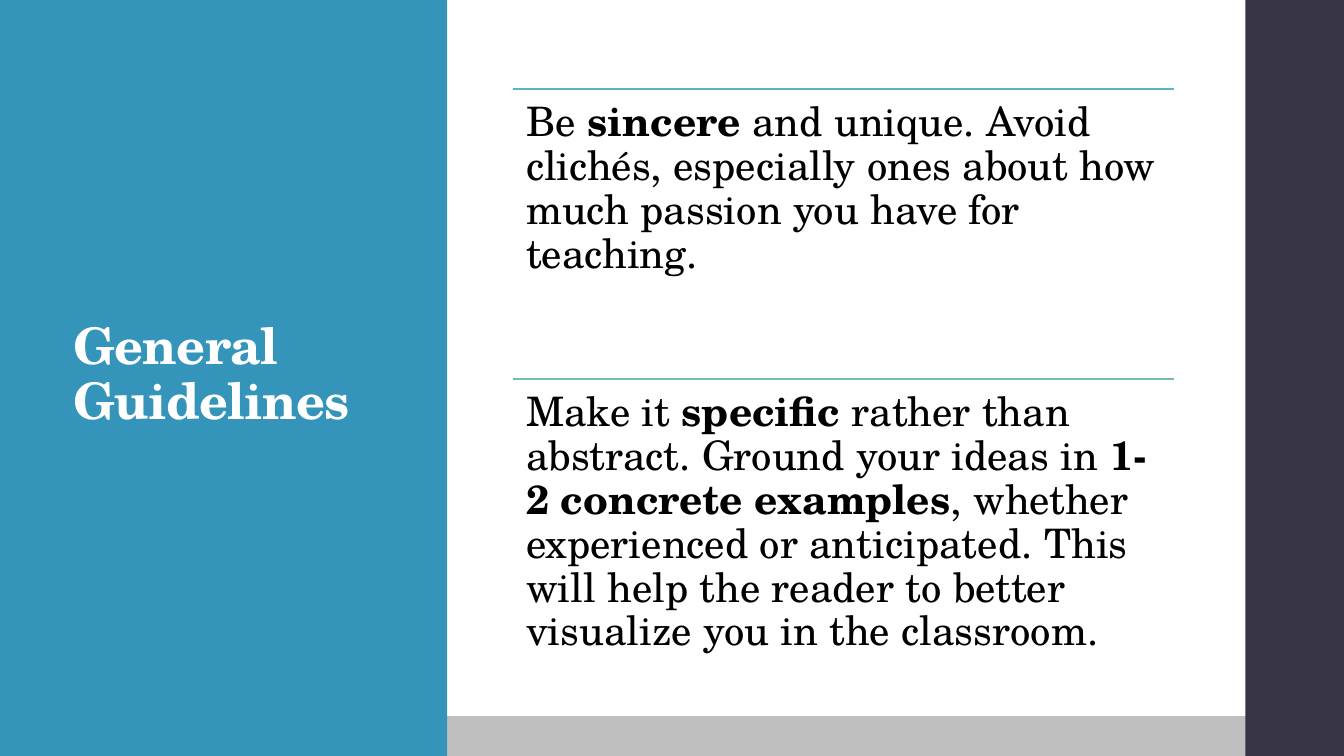
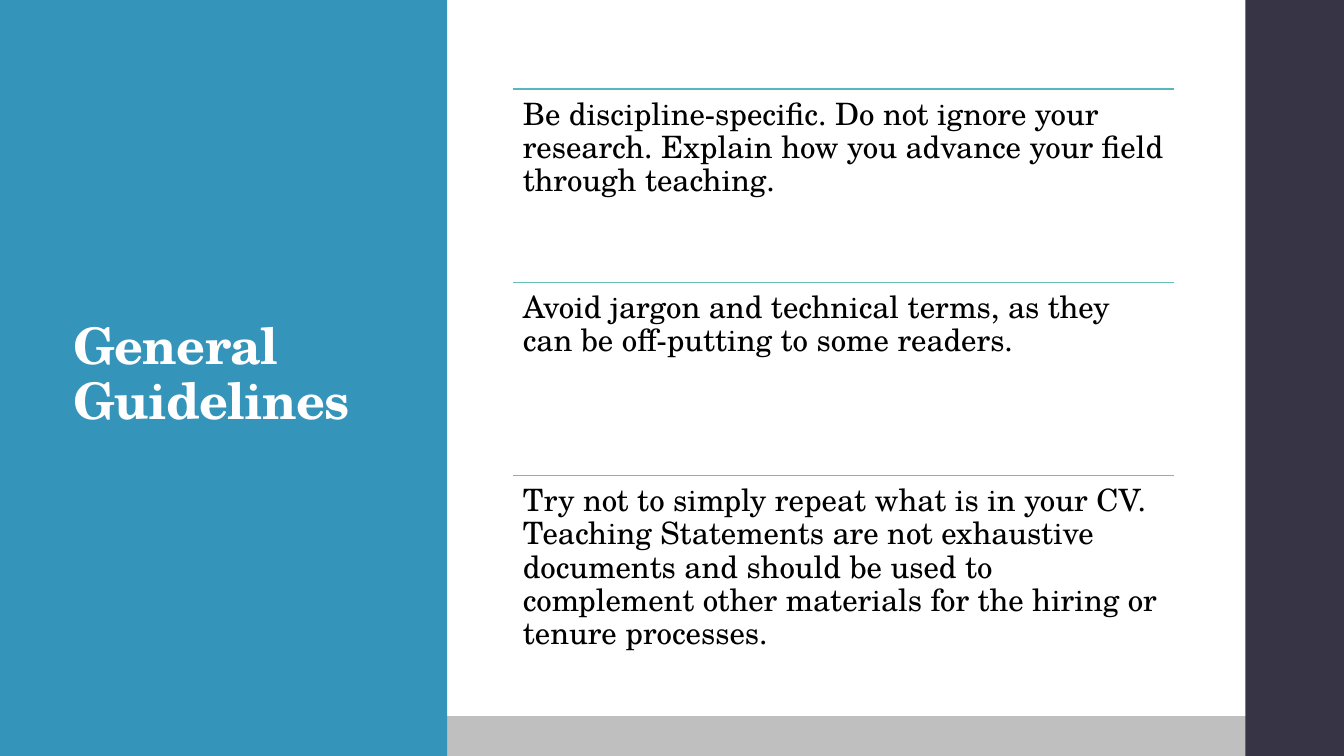
from dataclasses import dataclass

from lxml import etree
from pptx import Presentation
from pptx import util as u
from pptx.dml.color import RGBColor
from pptx.enum import shapes, text
from pptx.oxml import ns

EMU_PER_PX = 9525
SLIDE_WIDTH, SLIDE_HEIGHT = 1280, 720
FONT = "TeX Gyre Schola"
BLUE, DARK, GRAY = "3494BA", "373545", "BFBFBF"
WHITE, BLACK = "FFFFFF", "000000"
LIST_LEFT, LIST_TOP, LIST_WIDTH, LIST_HEIGHT = 489, 85, 629, 552


@dataclass(frozen=True)
class Box:
    left: int
    top: int
    width: int
    height: int


@dataclass(frozen=True)
class Run:
    words: str
    bold: bool = False


@dataclass(frozen=True)
class Guideline:
    rule_color: str
    runs: tuple[Run, ...]


@dataclass(frozen=True)
class GuidelineSlide:
    title: str
    font_size: int
    inset: int
    guidelines: tuple[Guideline, ...]


BANDS = (
    (Box(0, 682, SLIDE_WIDTH, 38), GRAY),
    (Box(0, 0, 426, SLIDE_HEIGHT), BLUE),
    (Box(1186, 0, 94, SLIDE_HEIGHT), DARK),
)
TITLE_BOX = Box(60, 87, 285, 544)

SLIDES = (
    GuidelineSlide("General Guidelines", 29, 12, (
        Guideline("58B6C0", (
            Run("Be"),
            Run(" sincere", True),
            Run(" and unique. Avoid clichés, especially ones about how much "
                "passion you have for teaching."),
        )),
        Guideline("75BDA7", (
            Run("Make it "),
            Run("specific", True),
            Run(" rather than abstract. Ground your ideas in "),
            Run("1-2 concrete examples", True),
            Run(", whether experienced or anticipated. This will help the "
                "reader to better visualize you in the classroom."),
        )),
    )),
    GuidelineSlide("General Guidelines", 22, 9, (
        Guideline("58B6C0", (
            Run("Be discipline-specific. Do not ignore your research. "
                "Explain how you advance your field through teaching."),
        )),
        Guideline("67BEB5", (
            Run("Avoid jargon and technical terms, as they can be "
                "off-putting to some readers."),
        )),
        Guideline("75BDA7", (
            Run("Try not to simply repeat what is in your CV. Teaching "
                "Statements are not exhaustive documents and should be used "
                "to complement other materials for the hiring or tenure "
                "processes."),
        )),
    )),
)


def px(length: int) -> u.Emu:
    return u.Emu(length * EMU_PER_PX)


def color(value: str) -> RGBColor:
    return RGBColor.from_string(value)


def place(box: Box) -> tuple[u.Emu, ...]:
    return px(box.left), px(box.top), px(box.width), px(box.height)


def add_band(slide, box: Box, fill: str) -> None:
    shape = slide.shapes.add_shape(shapes.MSO_SHAPE.RECTANGLE, *place(box))
    shape.shadow.inherit = False
    shape.fill.solid()
    shape.fill.fore_color.rgb = color(fill)
    shape.line.fill.background()


def add_rule(slide, left: int, top: int, width: int, line_color: str) -> None:
    """Draw a thin horizontal line without a shadow."""
    rule = slide.shapes.add_connector(
        shapes.MSO_CONNECTOR.STRAIGHT,
        px(left), px(top), px(left + width), px(top))
    rule.line.color.rgb = color(line_color)
    rule.line.width = u.Pt(1.1)
    etree.SubElement(rule.element.spPr, ns.qn("a:effectLst"))


def add_text(slide, box: Box, runs: tuple[Run, ...], size: int,
             font_color: str, insets: tuple[int, int, int, int],
             anchor: text.MSO_ANCHOR = text.MSO_ANCHOR.TOP,
             spacing: int = 0) -> None:
    """Insets run left, top, right, bottom; spacing is in 1/100 point."""
    frame = slide.shapes.add_textbox(*place(box)).text_frame
    frame.word_wrap = True
    frame.vertical_anchor = anchor
    (frame.margin_left, frame.margin_top,
     frame.margin_right, frame.margin_bottom) = map(px, insets)
    paragraph = frame.paragraphs[0]
    paragraph.line_spacing = 0.9
    for part in runs:
        run = paragraph.add_run()
        run.text = part.words
        run.font.name = FONT
        run.font.size = u.Pt(size)
        run.font.bold = part.bold
        run.font.color.rgb = color(font_color)
        if spacing:
            run.font._element.set("spc", str(spacing))


def add_frame(slide, title: str) -> None:
    """Draw the bands and the title that all slides share."""
    for box, fill in BANDS:
        add_band(slide, box, fill)
    add_text(slide, TITLE_BOX, (Run(title, True),), 36, WHITE,
             (10, 3, 10, 5), text.MSO_ANCHOR.MIDDLE, spacing=-50)


def add_guidelines(slide, content: GuidelineSlide) -> None:
    row_height = LIST_HEIGHT // len(content.guidelines)
    for index, guideline in enumerate(content.guidelines):
        top = LIST_TOP + index * row_height
        add_rule(slide, LIST_LEFT, top, LIST_WIDTH, guideline.rule_color)
        add_text(slide, Box(LIST_LEFT, top, LIST_WIDTH, row_height),
                 guideline.runs, content.font_size, BLACK,
                 (content.inset,) * 4)


def main() -> None:
    presentation = Presentation()
    presentation.slide_width = px(SLIDE_WIDTH)
    presentation.slide_height = px(SLIDE_HEIGHT)
    blank_layout = presentation.slide_layouts[6]
    for content in SLIDES:
        slide = presentation.slides.add_slide(blank_layout)
        add_frame(slide, content.title)
        add_guidelines(slide, content)
    presentation.save("out.pptx")


if __name__ == "__main__":
    main()
